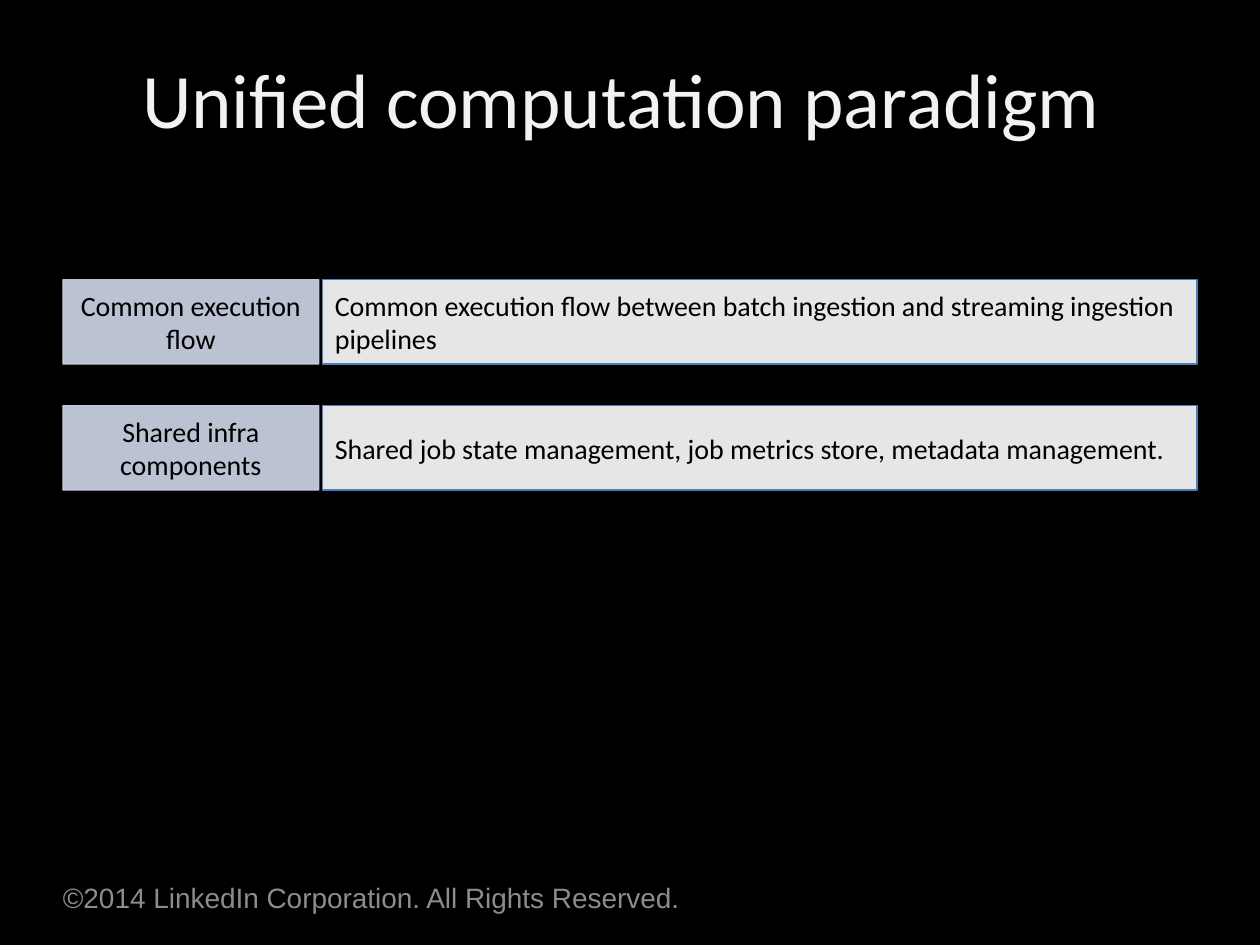
from lxml.etree import SubElement
from pptx import Presentation
from pptx.dml.color import RGBColor
from pptx.enum.shapes import MSO_SHAPE as Shape
from pptx.enum.text import MSO_ANCHOR as Anchor, PP_ALIGN as Align
from pptx.oxml.ns import qn
from pptx.util import Inches, Pt

BLACK = RGBColor(0x00, 0x00, 0x00)
WHITE = RGBColor(0xFF, 0xFF, 0xFF)
TITLE_WHITE = RGBColor(0xF2, 0xF2, 0xF2)
FOOTER_GREY = RGBColor(0x8C, 0x8C, 0x8C)
LABEL_FILL = RGBColor(0xD0, 0xD8, 0xE8)
LABEL_LINE = RGBColor(0xCB, 0xD3, 0xE3)
DETAIL_LINE = RGBColor(0x4B, 0x7E, 0xBC)

MARGIN = 0.5
LABEL_WIDTH = 2.03
DETAIL_LEFT, DETAIL_WIDTH = 2.56, 6.94
ROW_TOP, ROW_STEP, ROW_HEIGHT = 2.22, 1.0, 0.67
OPACITY = 90

ROWS = [
    ("Common execution flow",
     "Common execution flow between batch ingestion and streaming ingestion pipelines"),
    ("Shared infra components",
     "Shared job state management, job metrics store, metadata management."),
]


def write_text(frame, text, size=16, font="Calibri", color=BLACK,
               align=Align.LEFT, inset=None):
    frame.word_wrap = True
    frame.vertical_anchor = Anchor.MIDDLE
    if inset is not None:
        frame.margin_left = frame.margin_right = Inches(inset)
        frame.margin_top = frame.margin_bottom = Inches(inset)
    paragraph = frame.paragraphs[0]
    paragraph.alignment = align
    run = paragraph.add_run()
    run.text = text
    run.font.size = Pt(size)
    run.font.name = font
    run.font.color.rgb = color


def add_label(slide, left, top, width, height, text, **text_format):
    label = slide.shapes.add_textbox(*map(Inches, (left, top, width, height)))
    write_text(label.text_frame, text, **text_format)


def set_opacity(fill_parent, percent):
    color = fill_parent.find(qn("a:solidFill"))[0]
    SubElement(color, qn("a:alpha")).set("val", str(percent * 1000))


def add_box(slide, left, top, width, text, fill, line, line_opacity=100, **text_format):
    box = slide.shapes.add_shape(
        Shape.RECTANGLE, *map(Inches, (left, top, width, ROW_HEIGHT)))
    box.shadow.inherit = False
    box.fill.solid()
    box.fill.fore_color.rgb = fill
    box.line.color.rgb = line
    box.line.width = Pt(0.75)
    properties = box.element.spPr
    set_opacity(properties, OPACITY)
    if line_opacity < 100:
        set_opacity(properties.find(qn("a:ln")), line_opacity)
    write_text(box.text_frame, text, **text_format)


def main():
    deck = Presentation()
    deck.slide_width, deck.slide_height = Inches(10), Inches(7.5)
    slide = deck.slides.add_slide(deck.slide_layouts[6])
    slide.background.fill.solid()
    slide.background.fill.fore_color.rgb = BLACK

    # Footer and title
    add_label(slide, MARGIN, 7.03, 5.87, 0.18,
              "©2014 LinkedIn Corporation. All Rights Reserved.",
              font="Arial", color=FOOTER_GREY, inset=0)
    add_label(slide, MARGIN, 0.15, 9, 1.25, "Unified computation paradigm ",
              size=44, color=TITLE_WHITE, align=Align.CENTER)

    # One label and one explanation per row
    for index, (topic, detail) in enumerate(ROWS):
        top = ROW_TOP + index * ROW_STEP
        add_box(slide, MARGIN, top, LABEL_WIDTH, topic, LABEL_FILL, LABEL_LINE,
                line_opacity=OPACITY, align=Align.CENTER)
        add_box(slide, DETAIL_LEFT, top, DETAIL_WIDTH, detail, WHITE, DETAIL_LINE)

    deck.save("out.pptx")


if __name__ == "__main__":
    main()
